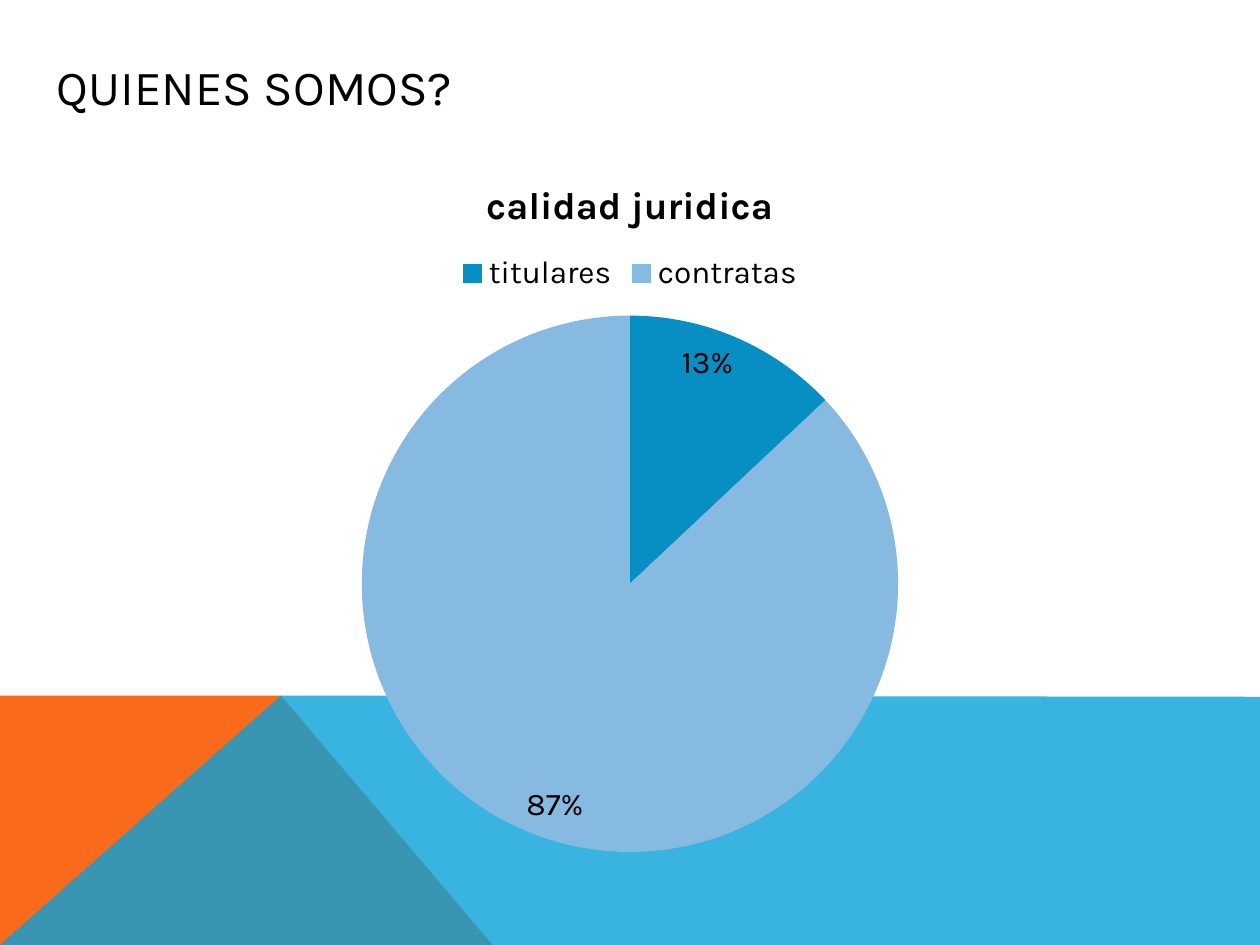
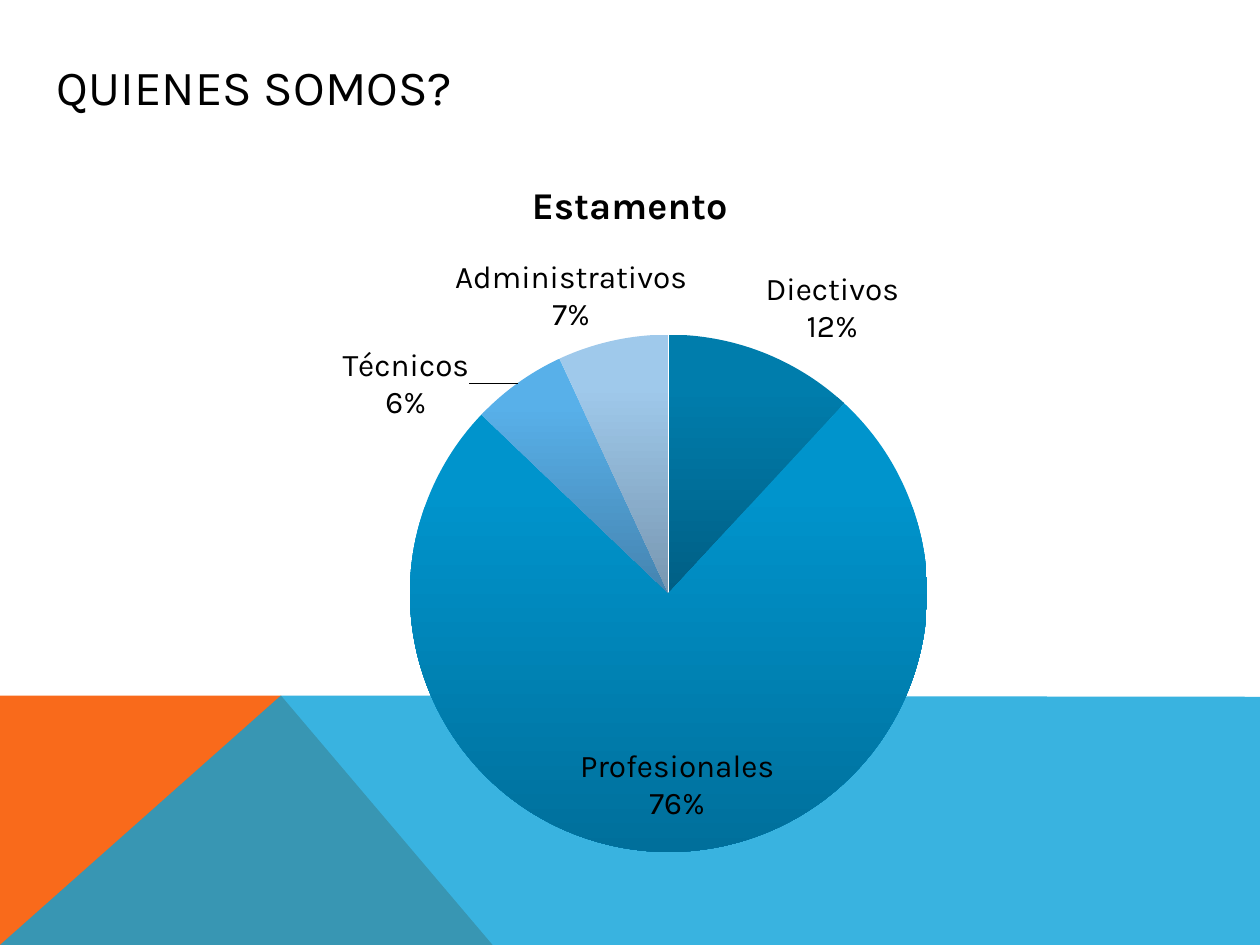
import dataclasses

import lxml.etree
import pptx
import pptx.chart.data
import pptx.dml.color
import pptx.enum.chart
import pptx.enum.text
import pptx.oxml.ns
import pptx.util

Inches = pptx.util.Inches
LabelPosition = pptx.enum.chart.XL_LABEL_POSITION


@dataclasses.dataclass(frozen=True)
class Theme:
    font: str = "Karla"
    text: str = "000000"
    orange: str = "F96A1B"
    blue: str = "08A1D9"
    title_size: float = 28
    chart_title_size: float = 21.6
    chart_size: float = 18
    # One (top, bottom) pair for each slice
    contract_slices: tuple = (("078FC3", "078FC3"), ("87BAE1", "87BAE1"))
    staff_slices: tuple = (
        ("007DAC", "005F85"),
        ("0094CC", "006F9B"),
        ("58B0E9", "4584B0"),
        ("9FC9EB", "7897B1"),
    )


THEME = Theme()
HEADING = "QUIENES SOMOS?"


def rgb(value):
    return pptx.dml.color.RGBColor.from_string(value)


def style_font(font, size, bold=False):
    font.name = THEME.font
    font.size = pptx.util.Pt(size)
    font.bold = bold
    font.color.rgb = rgb(THEME.text)


def add_band(slide, layout, corners, color, opacity=100):
    """Draw a polygon and move it to the layout that the slides share."""
    points = [(Inches(x), Inches(y)) for x, y in corners]
    outline = slide.shapes.build_freeform(*points[0], scale=1.0)
    outline.add_line_segments(points[1:], close=True)
    band = outline.convert_to_shape()
    band.shadow.inherit = False
    band.line.fill.background()
    band.fill.solid()
    band.fill.fore_color.rgb = rgb(color)
    if opacity < 100:
        tint = band.element.spPr.find(".//" + pptx.oxml.ns.qn("a:srgbClr"))
        alpha = lxml.etree.SubElement(tint, pptx.oxml.ns.qn("a:alpha"))
        alpha.set("val", str(opacity * 1000))
    layout.shapes.element.append(band.element)


def add_footer_bands(slide, layout):
    add_band(slide, layout, [(0, 7.5), (0, 5.52), (2.23, 5.52), (3.91, 7.5)], THEME.orange)
    add_band(slide, layout, [(0, 7.5), (2.23, 5.52), (10, 5.53), (10, 7.5)], THEME.blue, 80)


def place_title(layout):
    title = layout.placeholders[0]
    title.left, title.top = Inches(0.35), Inches(0.13)
    title.width, title.height = Inches(9.45), Inches(1.1)


def set_heading(slide, text):
    frame = slide.shapes.title.text_frame
    frame.text = text
    frame.vertical_anchor = pptx.enum.text.MSO_ANCHOR.MIDDLE
    paragraph = frame.paragraphs[0]
    paragraph.alignment = pptx.enum.text.PP_ALIGN.LEFT
    style_font(paragraph.runs[0].font, THEME.title_size)


def fill_slice(fill, top, bottom):
    if top == bottom:
        fill.solid()
        fill.fore_color.rgb = rgb(top)
        return
    fill.gradient()
    fill.gradient_angle = 270
    for stop, color, position in zip(fill.gradient_stops, (top, bottom), (0.2, 1)):
        stop.color.rgb = rgb(color)
        stop.position = position


def add_pie(slide, title, shares, slices, label_position, with_legend):
    data = pptx.chart.data.CategoryChartData()
    data.categories = list(shares)
    data.add_series(title, list(shares.values()))
    pie = slide.shapes.add_chart(
        pptx.enum.chart.XL_CHART_TYPE.PIE,
        Inches(0), Inches(1.2), Inches(10), Inches(5.7), data,
    ).chart
    style_font(pie.font, THEME.chart_size)

    # Chart title and legend
    pie.has_title = True
    pie.chart_title.text_frame.text = title
    title_run = pie.chart_title.text_frame.paragraphs[0].runs[0]
    style_font(title_run.font, THEME.chart_title_size, bold=True)
    pie.chart_title.include_in_layout = False
    pie.has_legend = with_legend
    if with_legend:
        pie.legend.position = pptx.enum.chart.XL_LEGEND_POSITION.TOP
        pie.legend.include_in_layout = False
        style_font(pie.legend.font, THEME.chart_size)

    # Slices
    plot = pie.plots[0]
    plot.vary_by_categories = True
    series = plot.series[0]
    for index, (top, bottom) in enumerate(slices):
        piece = series.points[index].format
        fill_slice(piece.fill, top, bottom)
        piece.line.fill.background()

    # Labels: the shares are already percentages
    labels = series.data_labels
    labels.show_value = True
    labels.show_category_name = not with_legend
    labels.number_format = '0"%"'
    labels.number_format_is_linked = False
    labels.position = label_position
    style_font(labels.font, THEME.chart_size)
    separator = lxml.etree.Element(pptx.oxml.ns.qn("c:separator"))
    separator.text = "\n"
    series_labels = plot.series[0].data_labels._element
    series_labels.find(pptx.oxml.ns.qn("c:showBubbleSize")).addnext(separator)


def main():
    deck = pptx.Presentation()
    deck.slide_width, deck.slide_height = Inches(10), Inches(7.5)
    layout = deck.slide_layouts.get_by_name("Title Only")
    place_title(layout)

    # Legal status of the staff
    contract_slide = deck.slides.add_slide(layout)
    add_footer_bands(contract_slide, layout)
    set_heading(contract_slide, HEADING)
    add_pie(contract_slide, "calidad juridica", {"titulares": 13, "contratas": 87},
            THEME.contract_slices, LabelPosition.INSIDE_END, with_legend=True)

    # Staff categories
    staff_slide = deck.slides.add_slide(layout)
    set_heading(staff_slide, HEADING)
    staff = {"Diectivos": 12, "Profesionales": 76, "Técnicos": 6, "Administrativos": 7}
    add_pie(staff_slide, "Estamento", staff,
            THEME.staff_slices, LabelPosition.BEST_FIT, with_legend=False)

    deck.save("out.pptx")


if __name__ == "__main__":
    main()
